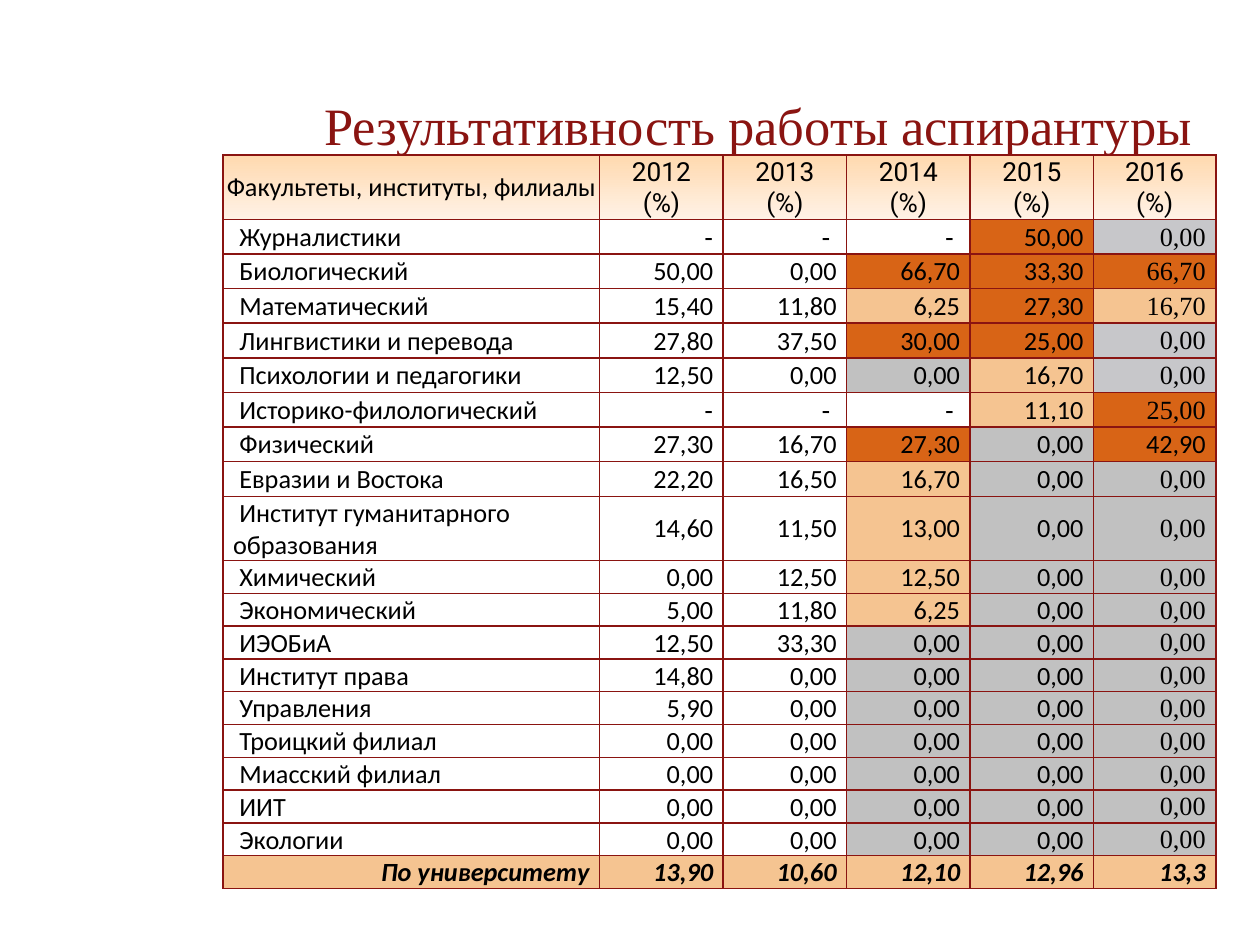
from lxml.etree import SubElement
from pptx import Presentation
from pptx.dml.color import RGBColor
from pptx.enum.text import MSO_ANCHOR as Anchor, PP_ALIGN as Align
from pptx.oxml.ns import qn
from pptx.util import Inches, Pt

COLORS = {
    "maroon": "8A1411", "text": "000000",
    "header_top": "FFD9AF", "header_bottom": "FFF2E6",
    "high": "D86416", "low": "F5C491", "zero": "C1C1C1", "zero_cool": "C7C7CA",
}
SANS, SERIF, HEADER_FONT, DASH_FONT = "Calibri", "Times New Roman", "Roboto", "Arial"
SLIDE_W, SLIDE_H = Inches(10), Inches(7.5)

YEARS = range(2012, 2017)
FIRST_RATED = 3  # column of 2014, the first year coloured by result
LAST_YEAR = len(YEARS)
RESULTS = [
    ("Журналистики", "- - - 50,00 0,00"),
    ("Биологический", "50,00 0,00 66,70 33,30 66,70"),
    ("Математический", "15,40 11,80 6,25 27,30 16,70"),
    ("Лингвистики и перевода", "27,80 37,50 30,00 25,00 0,00"),
    ("Психологии и педагогики", "12,50 0,00 0,00 16,70 0,00"),
    ("Историко-филологический", "- - - 11,10 25,00"),
    ("Физический", "27,30 16,70 27,30 0,00 42,90"),
    ("Евразии и Востока", "22,20 16,50 16,70 0,00 0,00"),
    ("Институт гуманитарного образования", "14,60 11,50 13,00 0,00 0,00"),
    ("Химический", "0,00 12,50 12,50 0,00 0,00"),
    ("Экономический", "5,00 11,80 6,25 0,00 0,00"),
    ("ИЭОБиА", "12,50 33,30 0,00 0,00 0,00"),
    ("Институт права", "14,80 0,00 0,00 0,00 0,00"),
    ("Управления", "5,90 0,00 0,00 0,00 0,00"),
    ("Троицкий филиал", "0,00 0,00 0,00 0,00 0,00"),
    ("Миасский филиал", "0,00 0,00 0,00 0,00 0,00"),
    ("ИИТ", "0,00 0,00 0,00 0,00 0,00"),
    ("Экологии", "0,00 0,00 0,00 0,00 0,00"),
]
TOTAL = ("По университету", "13,90 10,60 12,10 12,96 13,3")
COOL_ZERO_FACULTIES = {
    "Журналистики", "Лингвистики и перевода", "Психологии и педагогики"}
COLUMN_WIDTHS = [2.99] + [0.98] * 4 + [0.97]
ROW_HEIGHTS = [0.51] + [2.2 / 8] * 8 + [0.51] + [0.26] * 10


def rgb(name):
    return RGBColor.from_string(COLORS[name])


def style_text(frame, size, font, color, align, bold=False):
    for paragraph in frame.paragraphs:
        paragraph.alignment = align
        for run in paragraph.runs:
            run.font.size = Pt(size)
            run.font.name = font
            run.font.color.rgb = rgb(color)
            run.font.bold = run.font.italic = bold


def add_title(slide, text):
    box = slide.shapes.add_textbox(
        int(SLIDE_W * 0.204), int(SLIDE_H * 0.048),
        int(SLIDE_W * 0.796), int(SLIDE_H * 0.167))
    frame = box.text_frame
    frame.word_wrap = True
    frame.vertical_anchor = Anchor.MIDDLE
    frame.margin_left = frame.margin_right = Inches(0.05)
    frame.text = text
    style_text(frame, 30, SERIF, "maroon", Align.CENTER)


def add_borders(cell):
    properties = cell._tc.get_or_add_tcPr()
    for position, side in enumerate(("lnL", "lnR", "lnT", "lnB")):
        line = SubElement(properties, qn(f"a:{side}"), w=str(Pt(1)))
        fill = SubElement(line, qn("a:solidFill"))
        SubElement(fill, qn("a:srgbClr"), val=COLORS["maroon"])
        properties.insert(position, line)


def fill_cell(cell, text, align, font=SANS, color=None, left=0.01, right=0.01,
              bold=False):
    cell.margin_left, cell.margin_right = Inches(left), Inches(right)
    cell.margin_top, cell.margin_bottom = Inches(0.01), 0
    cell.vertical_anchor = Anchor.MIDDLE
    cell.text_frame.text = text
    style_text(cell.text_frame, 15, font, "text", align, bold)
    if color:
        cell.fill.solid()
        cell.fill.fore_color.rgb = rgb(color)
    else:
        cell.fill.background()
    add_borders(cell)


def fill_header(cell, text, font):
    fill_cell(cell, text, Align.CENTER, font)
    cell.fill.gradient()
    cell.fill.gradient_angle = 270
    for stop, name in zip(cell.fill.gradient_stops, ("header_top", "header_bottom")):
        stop.color.rgb = rgb(name)


def fill_faculty(cell, faculty):
    fill_cell(cell, faculty, Align.LEFT, left=0.08)
    first_line = cell.text_frame.paragraphs[0]._p.get_or_add_pPr()
    first_line.set("indent", str(Inches(0.05)))


def rating_color(faculty, value, column):
    if value == "-" or column < FIRST_RATED:
        return None
    share = float(value.replace(",", "."))
    if share:
        return "high" if share >= 20 else "low"
    cool = column == LAST_YEAR and faculty in COOL_ZERO_FACULTIES
    return "zero_cool" if cool else "zero"


def fill_result(cell, faculty, value, column):
    font, right = SANS, 0.08
    if value == "-":
        font = DASH_FONT
        right = 0.08 if column == 1 else 0.13
    elif column == LAST_YEAR and faculty != "Физический":
        font = SERIF
    fill_cell(cell, value, Align.RIGHT, font,
              rating_color(faculty, value, column), right=right)


def add_results_table(slide):
    table = slide.shapes.add_table(
        len(ROW_HEIGHTS), len(COLUMN_WIDTHS),
        int(SLIDE_W * 0.177), int(SLIDE_H * 0.164),
        Inches(sum(COLUMN_WIDTHS)), Inches(sum(ROW_HEIGHTS))).table
    table.first_row = table.horz_banding = False
    for column, width in zip(table.columns, COLUMN_WIDTHS):
        column.width = Inches(width)
    for row, height in zip(table.rows, ROW_HEIGHTS):
        row.height = Inches(height)

    fill_header(table.cell(0, 0), "Факультеты, институты, филиалы", SANS)
    for column, year in enumerate(YEARS, 1):
        fill_header(table.cell(0, column), f"{year}\n(%)", HEADER_FONT)
    for row, (faculty, values) in enumerate(RESULTS, 1):
        fill_faculty(table.cell(row, 0), faculty)
        for column, value in enumerate(values.split(), 1):
            fill_result(table.cell(row, column), faculty, value, column)
    label, values = TOTAL
    for column, text in enumerate([label, *values.split()]):
        fill_cell(table.cell(len(RESULTS) + 1, column), text, Align.RIGHT,
                  color="low", right=0.08, bold=True)


def main():
    deck = Presentation()
    deck.slide_width, deck.slide_height = SLIDE_W, SLIDE_H
    slide = deck.slides.add_slide(deck.slide_layouts[6])
    add_title(slide, "Результативность работы аспирантуры")
    add_results_table(slide)
    deck.save("out.pptx")


if __name__ == "__main__":
    main()
